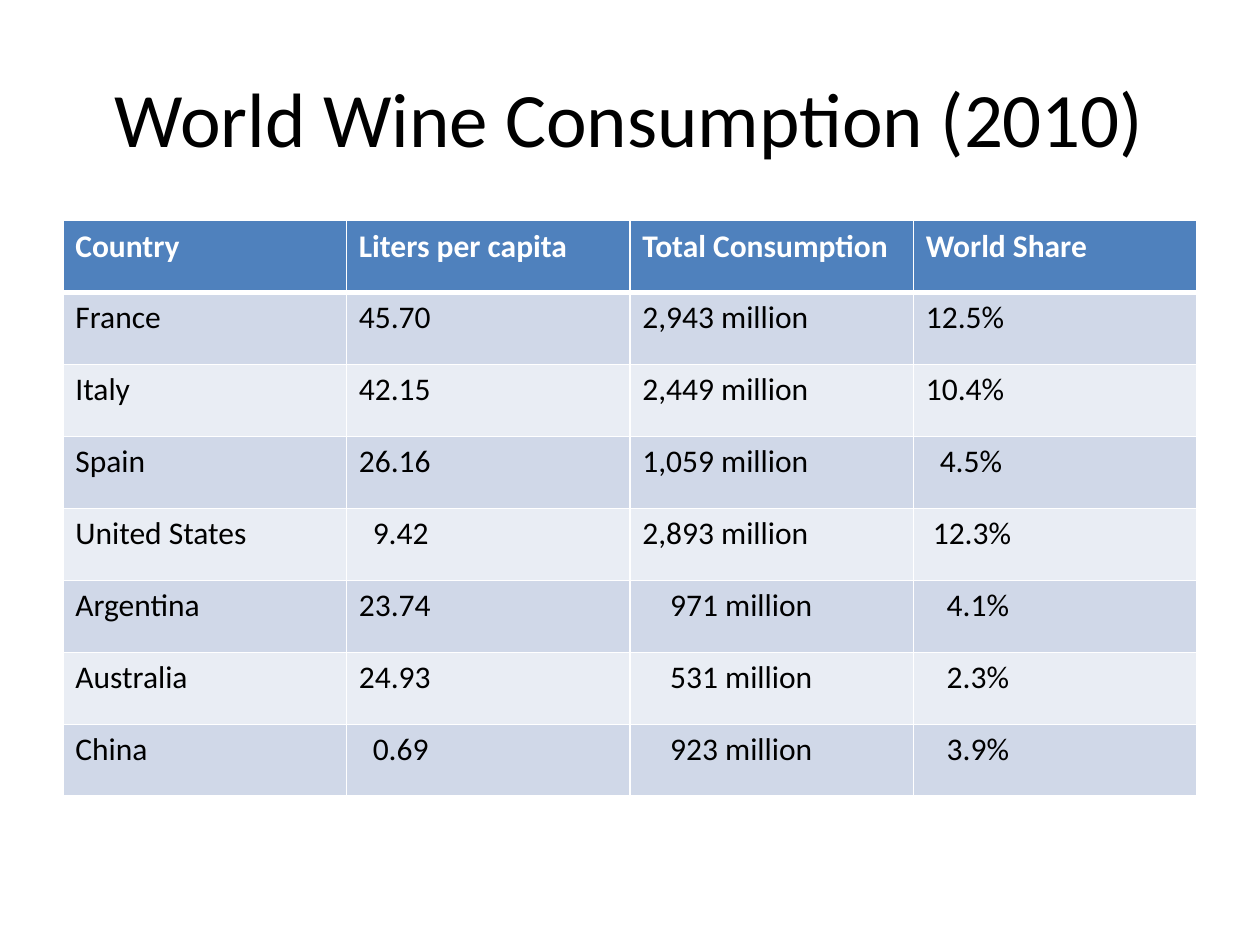
from lxml.etree import SubElement
from pptx import Presentation
from pptx.dml.color import RGBColor
from pptx.enum.text import MSO_ANCHOR, PP_ALIGN
from pptx.oxml.ns import qn
from pptx.util import Cm, Pt

# Content
TITLE = "World Wine Consumption (2010)"
HEADINGS = ["Country", "Liters per capita", "Total Consumption", "World Share"]
COUNTRIES = [
    ["France", "45.70", "2,943 million", "12.5%"],
    ["Italy", "42.15", "2,449 million", "10.4%"],
    ["Spain", "26.16", "1,059 million", "4.5%"],
    ["United States", "9.42", "2,893 million", "12.3%"],
    ["Argentina", "23.74", "971 million", "4.1%"],
    ["Australia", "24.93", "531 million", "2.3%"],
    ["China", "0.69", "923 million", "3.9%"],
]
# Extra left indent of shorter figures, in steps, by (row, column)
INDENT_STEPS = {
    (3, 3): 2, (4, 1): 2, (4, 3): 1, (5, 2): 4, (5, 3): 3,
    (6, 2): 4, (6, 3): 3, (7, 1): 2, (7, 2): 4, (7, 3): 3,
}

# Style
FONT = "Calibri"
BLACK = RGBColor(0x00, 0x00, 0x00)
WHITE = RGBColor(0xFF, 0xFF, 0xFF)
HEADER_BLUE = RGBColor(0x4F, 0x81, 0xBD)
BANDS = [RGBColor(0xD0, 0xD8, 0xE8), RGBColor(0xE9, 0xED, 0xF4)]
LEFT, WIDTH = Cm(1.27), Cm(22.86)
ROW_HEIGHT = Cm(1.45)
CELL_MARGIN, INDENT_STEP = Cm(0.25), Cm(0.14)


def format_runs(paragraph, size, color, bold=False):
    for run in paragraph.runs:
        run.font.name = FONT
        run.font.size = Pt(size)
        run.font.bold = bold
        run.font.color.rgb = color


def set_borders(cell, bottom_width):
    properties = cell._tc.get_or_add_tcPr()
    widths = {"a:lnL": 1, "a:lnR": 1, "a:lnT": 1, "a:lnB": bottom_width}
    for position, (tag, width) in enumerate(widths.items()):
        line = SubElement(properties, qn(tag), w=str(Pt(width)))
        fill = SubElement(line, qn("a:solidFill"))
        SubElement(fill, qn("a:srgbClr"), val=str(WHITE))
        properties.insert(position, line)


def add_title(slide):
    title = slide.shapes.title
    title.left, title.top, title.width, title.height = LEFT, Cm(0.76), WIDTH, Cm(3.18)
    title.text_frame.text = TITLE
    title.text_frame.vertical_anchor = MSO_ANCHOR.MIDDLE
    paragraph = title.text_frame.paragraphs[0]
    paragraph.alignment = PP_ALIGN.CENTER
    format_runs(paragraph, 44, BLACK)


def add_consumption_table(slide):
    rows = [HEADINGS] + COUNTRIES
    table = slide.shapes.add_table(
        len(rows), len(HEADINGS), LEFT, Cm(4.45), WIDTH, ROW_HEIGHT * len(rows)
    ).table
    for row_index, values in enumerate(rows):
        is_header = row_index == 0
        for column_index, value in enumerate(values):
            cell = table.cell(row_index, column_index)
            cell.text_frame.text = value
            steps = INDENT_STEPS.get((row_index, column_index), 0)
            cell.margin_left = CELL_MARGIN + INDENT_STEP * steps
            cell.fill.solid()
            cell.fill.fore_color.rgb = HEADER_BLUE if is_header else BANDS[(row_index - 1) % 2]
            format_runs(cell.text_frame.paragraphs[0], 18, WHITE if is_header else BLACK, is_header)
            # The thick rule under the header is shared with the first country row
            set_borders(cell, 3 if is_header else 1)
            if row_index == 1:
                cell._tc.tcPr.find(qn("a:lnT")).set("w", str(Pt(3)))


def main():
    presentation = Presentation()
    presentation.slide_width, presentation.slide_height = Cm(25.4), Cm(19.05)
    slide = presentation.slides.add_slide(presentation.slide_layouts[5])  # title only
    add_title(slide)
    add_consumption_table(slide)
    presentation.save("out.pptx")


if __name__ == "__main__":
    main()
